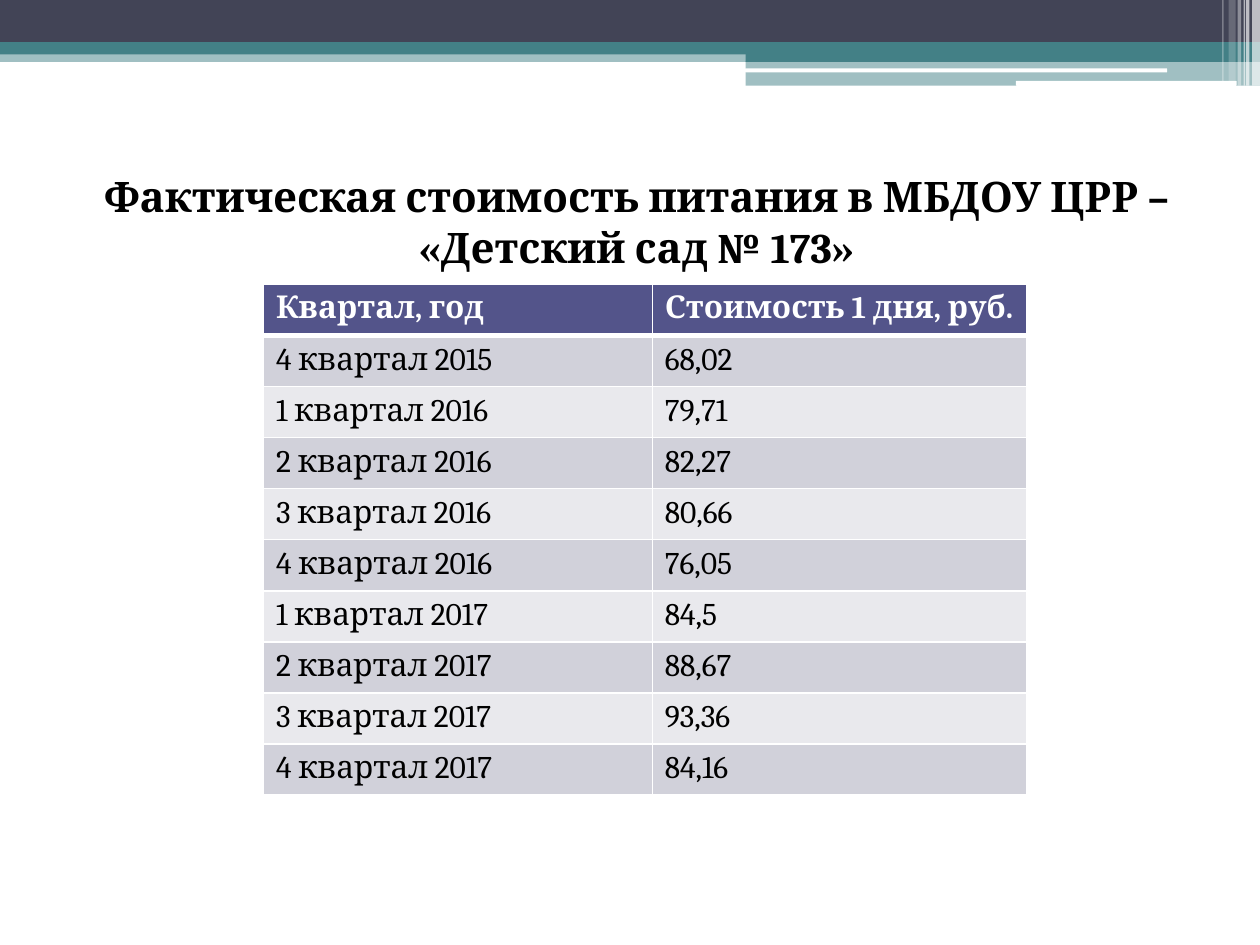
from dataclasses import dataclass

from lxml.etree import SubElement
from pptx import Presentation
from pptx.dml.color import RGBColor
from pptx.enum.shapes import MSO_SHAPE
from pptx.enum.text import MSO_ANCHOR, MSO_AUTO_SIZE, PP_ALIGN
from pptx.oxml.ns import qn
from pptx.slide import Slide
from pptx.table import _Cell
from pptx.text.text import TextFrame
from pptx.util import Cm, Pt


@dataclass(frozen=True)
class Theme:
    font: str = "Cambria"
    title_size: int = 24
    table_size: int = 18
    text: str = "000000"
    white: str = "FFFFFF"
    navy: str = "424456"
    teal: str = "438086"
    header: str = "53548A"
    odd_row: str = "D1D1DA"
    even_row: str = "E9E9ED"


@dataclass(frozen=True)
class Band:
    left: float
    top: float
    width: float
    height: float
    color: str
    opacity: int = 100
    rounded: bool = False


@dataclass(frozen=True)
class QuarterCost:
    quarter: str
    cost: str


THEME = Theme()
SLIDE_WIDTH = 25.4
ROW_HEIGHT = 1.03
COLUMN_WIDTHS = (7.84, 7.55)
TITLE = "Фактическая стоимость питания в МБДОУ ЦРР – «Детский сад № 173»"
HEADING = QuarterCost("Квартал, год", "Стоимость 1 дня, руб.")
COSTS = [
    QuarterCost("4 квартал 2015", "68,02"),
    QuarterCost("1 квартал 2016", "79,71"),
    QuarterCost("2 квартал 2016", "82,27"),
    QuarterCost("3 квартал 2016", "80,66"),
    QuarterCost("4 квартал 2016", "76,05"),
    QuarterCost("1 квартал 2017", "84,5"),
    QuarterCost("2 квартал 2017", "88,67"),
    QuarterCost("3 квартал 2017", "93,36"),
    QuarterCost("4 квартал 2017", "84,16"),
]
HEADER_BANDS = [
    Band(0, 1.02, SLIDE_WIDTH, 0.23, THEME.teal, 50),
    Band(0, 0, SLIDE_WIDTH, 0.86, THEME.navy),
    Band(0, 0.85, SLIDE_WIDTH, 0.25, THEME.teal),
    Band(15.03, 1, 10.37, 0.25, THEME.teal),
    Band(15.03, 1.23, 10.37, 0.5, THEME.teal, 50),
    Band(15.02, 1.38, 8.51, 0.08, THEME.white, rounded=True),
    Band(20.48, 1.63, 4.45, 0.1, THEME.white, rounded=True),
]
EDGE_STRIPES = [
    Band(25.24, 0, 0.16, 1.73, THEME.white, 65),
    Band(25.12, 0, 0.07, 1.73, THEME.white, 65),
    Band(25.07, 0, 0.03, 1.73, THEME.white, 60),
    Band(24.95, 0, 0.07, 1.73, THEME.white, 40),
    Band(24.77, 0, 0.14, 1.63, THEME.white, 20),
    Band(24.64, 0, 0.03, 1.63, THEME.white, 30),
]


def write_text(frame: TextFrame, text: str, *, size: int, color: str = THEME.text,
               bold: bool = False, align: PP_ALIGN = PP_ALIGN.LEFT) -> None:
    paragraph = frame.paragraphs[0]
    paragraph.alignment = align
    run = paragraph.add_run()
    run.text = text
    run.font.name = THEME.font
    run.font.size = Pt(size)
    run.font.bold = bold
    run.font.color.rgb = RGBColor.from_string(color)


def draw_band(slide: Slide, band: Band) -> None:
    preset = MSO_SHAPE.ROUNDED_RECTANGLE if band.rounded else MSO_SHAPE.RECTANGLE
    bar = slide.shapes.add_shape(
        preset, Cm(band.left), Cm(band.top), Cm(band.width), Cm(band.height))
    bar.shadow.inherit = False
    bar.line.fill.background()
    bar.fill.solid()
    bar.fill.fore_color.rgb = RGBColor.from_string(band.color)
    if band.opacity < 100:
        color = bar.fill._xPr.find(qn("a:solidFill"))[0]
        SubElement(color, qn("a:alpha"), val=str(band.opacity * 1000))


def draw_title(slide: Slide) -> None:
    title = slide.shapes.title
    title.left, title.top = Cm(1.4), Cm(2.97)
    title.width, title.height = Cm(22.86), Cm(2.97)
    frame = title.text_frame
    frame.word_wrap = True
    frame.auto_size = MSO_AUTO_SIZE.NONE
    frame.vertical_anchor = MSO_ANCHOR.MIDDLE
    write_text(frame, TITLE, size=THEME.title_size, bold=True, align=PP_ALIGN.CENTER)


def set_border(cell: _Cell, side: str, width: int) -> None:
    properties = cell._tc.get_or_add_tcPr()
    line = SubElement(properties, qn(f"a:ln{side}"), w=str(Pt(width)))
    fill = SubElement(line, qn("a:solidFill"))
    SubElement(fill, qn("a:srgbClr"), val=THEME.white)


def draw_costs(slide: Slide) -> None:
    rows = [HEADING, *COSTS]
    costs = slide.shapes.add_table(
        len(rows), len(COLUMN_WIDTHS), Cm(5.31), Cm(5.73),
        Cm(sum(COLUMN_WIDTHS)), Cm(ROW_HEIGHT * len(rows))).table
    for column, width in zip(costs.columns, COLUMN_WIDTHS):
        column.width = Cm(width)
    for index, row in enumerate(rows):
        costs.rows[index].height = Cm(ROW_HEIGHT)
        is_header = index == 0
        row_fill = THEME.odd_row if index % 2 else THEME.even_row
        for column, text in enumerate((row.quarter, row.cost)):
            cell = costs.cell(index, column)
            for side in "LRTB":
                thick = (is_header and side == "B") or (index == 1 and side == "T")
                set_border(cell, side, 3 if thick else 1)
            cell.fill.solid()
            cell.fill.fore_color.rgb = RGBColor.from_string(
                THEME.header if is_header else row_fill)
            write_text(cell.text_frame, text, size=THEME.table_size, bold=is_header,
                       color=THEME.white if is_header else THEME.text)


def main() -> None:
    presentation = Presentation()
    presentation.slide_width, presentation.slide_height = Cm(SLIDE_WIDTH), Cm(19.05)
    slide = presentation.slides.add_slide(presentation.slide_layouts[5])
    for band in HEADER_BANDS + EDGE_STRIPES:
        draw_band(slide, band)
    draw_title(slide)
    draw_costs(slide)
    presentation.save("out.pptx")


if __name__ == "__main__":
    main()
